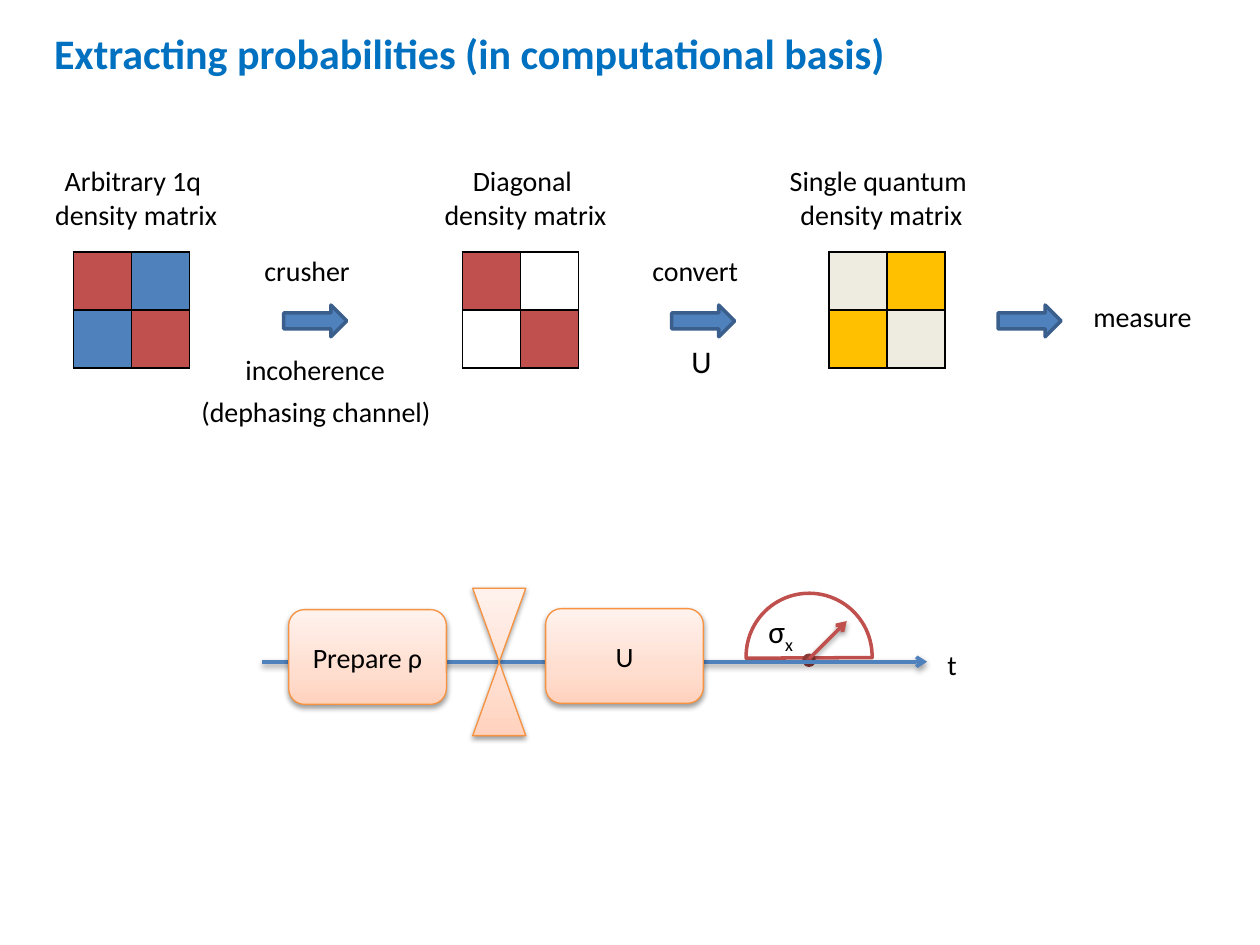
"""Build the slide on extracting probabilities from a density matrix."""
import copy
import dataclasses

import lxml.etree
import pptx
import pptx.dml.color
import pptx.enum.shapes
import pptx.enum.text
import pptx.oxml.ns
import pptx.util

Cm = pptx.util.Cm
Pt = pptx.util.Pt
RGB = pptx.dml.color.RGBColor.from_string
qn = pptx.oxml.ns.qn
SHAPE = pptx.enum.shapes.MSO_SHAPE
STRAIGHT = pptx.enum.shapes.MSO_CONNECTOR.STRAIGHT
LEFT = pptx.enum.text.PP_ALIGN.LEFT
CENTER = pptx.enum.text.PP_ALIGN.CENTER


@dataclasses.dataclass(frozen=True)
class Theme:
    font: str = "Calibri"
    title: str = "0070C0"
    text: str = "000000"
    white: str = "FFFFFF"
    red: str = "C0504D"
    dark_red: str = "8E3B39"
    blue: str = "4F81BD"
    dark_blue: str = "3A5F8C"
    cream: str = "EEECE1"
    gold: str = "FFC000"
    orange: str = "F69240"
    gradient: tuple = ((0, "FFD2BD"), (0.35, "FFDED0"), (1, "FFF2ED"))
    title_size: int = 24
    symbol_size: int = 18
    body_size: int = 16


theme = Theme()


def write_lines(frame, lines, size=theme.body_size, color=theme.text, align=LEFT, bold=False):
    """Write one paragraph per line into a text frame."""
    for index, line in enumerate(lines):
        paragraph = frame.add_paragraph() if index else frame.paragraphs[0]
        paragraph.alignment = align
        run = paragraph.add_run()
        run.text = line
        run.font.name = theme.font
        run.font.size = Pt(size)
        run.font.bold = bold
        run.font.color.rgb = RGB(color)


def add_shadow(shape):
    """Give a shape or connector a soft shadow below it."""
    properties = shape._element.spPr
    for effects in properties.findall(qn("a:effectLst")):
        properties.remove(effects)
    effects = lxml.etree.SubElement(properties, qn("a:effectLst"))
    shadow = lxml.etree.SubElement(effects, qn("a:outerShdw"), blurRad=str(Pt(3.1)),
                                   dist=str(Pt(1.6)), dir="5400000", rotWithShape="0")
    color = lxml.etree.SubElement(shadow, qn("a:srgbClr"), val=theme.text)
    lxml.etree.SubElement(color, qn("a:alpha"), val="38000")


presentation = pptx.Presentation()
presentation.slide_width = Cm(25.4)
presentation.slide_height = Cm(19.05)
slide = presentation.slides.add_slide(presentation.slide_layouts[6])
shapes = slide.shapes

matrices = [
    (1.48, [[theme.red, theme.blue], [theme.blue, theme.red]]),
    (9.32, [[theme.red, None], [None, theme.red]]),
    (16.71, [[theme.cream, theme.gold], [theme.gold, theme.cream]]),
]
cell_size = 1.17
for left, colors in matrices:
    table = shapes.add_table(2, 2, Cm(left), Cm(5.08), Cm(2 * cell_size), Cm(2 * cell_size)).table
    table.first_row = table.horz_banding = False
    for index, row_colors in enumerate(colors):
        table.rows[index].height = table.columns[index].width = Cm(cell_size)
        for column, color in enumerate(row_colors):
            cell = table.cell(index, column)
            cell_properties = cell._tc.get_or_add_tcPr()
            for side in ("a:lnL", "a:lnR", "a:lnT", "a:lnB"):
                border = lxml.etree.SubElement(cell_properties, qn(side), w=str(Pt(1)))
                border_fill = lxml.etree.SubElement(border, qn("a:solidFill"))
                lxml.etree.SubElement(border_fill, qn("a:srgbClr"), val=theme.text)
            if color:
                cell.fill.solid()
                cell.fill.fore_color.rgb = RGB(color)
            else:
                cell.fill.background()

meter = shapes.add_group_shape()
solid_shapes = [
    (shapes, SHAPE.RIGHT_ARROW, 5.72, 6.15, 1.27, 0.64, theme.blue, theme.dark_blue),
    (shapes, SHAPE.RIGHT_ARROW, 13.54, 6.15, 1.27, 0.64, theme.blue, theme.dark_blue),
    (shapes, SHAPE.RIGHT_ARROW, 20.12, 6.15, 1.27, 0.64, theme.blue, theme.dark_blue),
    (meter.shapes, SHAPE.CHORD, 15.04, 11.96, 2.54, 2.54, theme.white, theme.red),
    (meter.shapes, SHAPE.OVAL, 16.21, 13.21, 0.2, 0.2, theme.red, theme.dark_red),
]
for parent, kind, left, top, width, height, fill, line in solid_shapes:
    shape = parent.add_shape(kind, Cm(left), Cm(top), Cm(width), Cm(height))
    shape.shadow.inherit = False
    shape.fill.solid()
    shape.fill.fore_color.rgb = RGB(fill)
    shape.line.color.rgb = RGB(line)
    shape.line.width = Pt(2)
    if kind == SHAPE.CHORD:
        shape.rotation = 105.7
        shape.adjustments[0] = 43.52
        shape.adjustments[1] = 153.32

arrow_lines = [
    (meter.shapes, 16.31, 13.28, 17.07, 12.52, theme.red),
    (shapes, 5.28, 13.34, 18.69, 13.34, theme.blue),
]
for parent, start_x, start_y, end_x, end_y, color in arrow_lines:
    connector = parent.add_connector(STRAIGHT, Cm(start_x), Cm(start_y), Cm(end_x), Cm(end_y))
    connector.line.color.rgb = RGB(color)
    connector.line.width = Pt(2)
    line_properties = connector._element.spPr.find(qn("a:ln"))
    lxml.etree.SubElement(line_properties, qn("a:tailEnd"), type="arrow")
    add_shadow(connector)

circuit_parts = [
    (SHAPE.ROUNDED_RECTANGLE, 5.82, 12.29, 3.18, 1.91, "Prepare ρ"),
    (SHAPE.FLOWCHART_COLLATE, 9.53, 11.86, 1.07, 2.97, None),
    (SHAPE.ROUNDED_RECTANGLE, 11, 12.27, 3.18, 1.91, "U"),
]
for kind, left, top, width, height, text in circuit_parts:
    shape = shapes.add_shape(kind, Cm(left), Cm(top), Cm(width), Cm(height))
    shape.fill.gradient()
    shape.fill.gradient_angle = 90
    stop_list = shape._element.spPr.find(".//" + qn("a:gsLst"))
    stop_list.append(copy.deepcopy(stop_list[0]))
    for stop, (position, color) in zip(shape.fill.gradient_stops, theme.gradient):
        stop.position = position
        stop.color.rgb = RGB(color)
    shape.line.color.rgb = RGB(theme.orange)
    shape.line.width = Pt(0.75)
    add_shadow(shape)
    if text:
        shape.text_frame.vertical_anchor = pptx.enum.text.MSO_ANCHOR.MIDDLE
        write_lines(shape.text_frame, [text], align=CENTER)

title_style = {"size": theme.title_size, "color": theme.title, "bold": True}
symbol_style = {"size": theme.symbol_size}
centered = {"align": CENTER}
labels = [
    (shapes, 0.84, 0.43, 17.45, 1.27, ["Extracting probabilities (in computational basis)"], title_style),
    (shapes, 0.84, 3.18, 3.81, 1.63, ["Arbitrary 1q ", "density matrix"], centered),
    (shapes, 8.69, 3.18, 3.81, 1.63, ["Diagonal ", "density matrix"], centered),
    (shapes, 15.65, 3.18, 4.24, 1.63, ["Single quantum ", "density matrix"], centered),
    (shapes, 5.08, 4.98, 2.31, 0.94, ["crusher"], {}),
    (shapes, 4.45, 6.99, 3.81, 0.94, ["incoherence"], centered),
    (shapes, 3.81, 7.82, 5.18, 0.94, ["(dephasing channel)"], {}),
    (shapes, 12.9, 4.98, 2.26, 0.94, ["convert"], {}),
    (shapes, 13.69, 6.78, 0.91, 1.02, ["U"], symbol_style),
    (shapes, 21.79, 5.92, 2.51, 0.94, ["measure"], {}),
    (shapes, 18.85, 12.93, 0.71, 0.94, ["t"], {}),
    (meter.shapes, 15.24, 12.22, 1.09, 1.02, ["σ"], symbol_style),
]
for parent, left, top, width, height, lines, style in labels:
    label = parent.add_textbox(Cm(left), Cm(top), Cm(width), Cm(height))
    label.text_frame.word_wrap = False
    label.text_frame.auto_size = pptx.enum.text.MSO_AUTO_SIZE.SHAPE_TO_FIT_TEXT
    write_lines(label.text_frame, lines, **style)
    if lines == ["σ"]:
        subscript = label.text_frame.paragraphs[0].add_run()
        subscript.text = "x"
        subscript.font.name = theme.font
        subscript.font.size = Pt(theme.symbol_size)
        subscript.font.color.rgb = RGB(theme.text)
        subscript._r.get_or_add_rPr().set("baseline", "-25000")

presentation.save("out.pptx")
